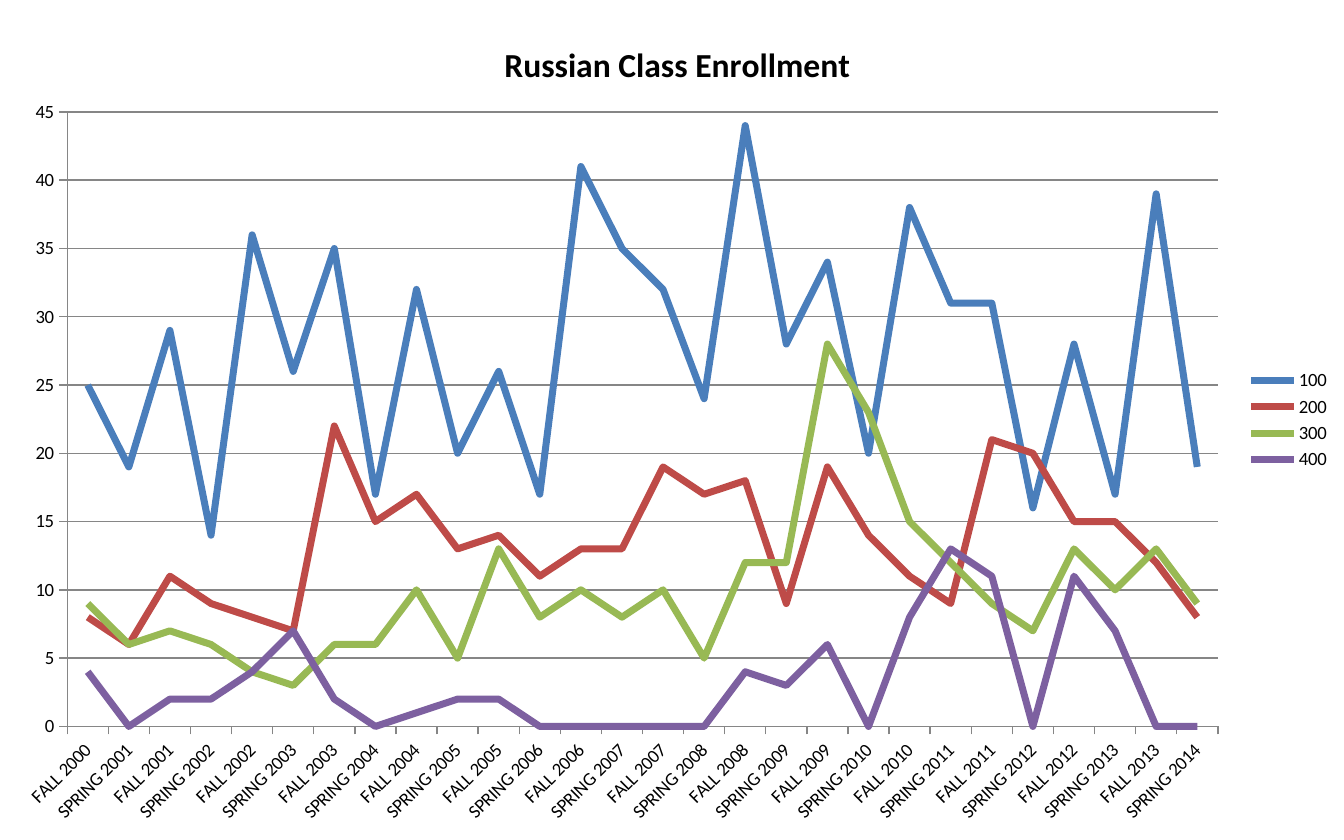
from dataclasses import dataclass

from pptx import Presentation
from pptx.chart.data import CategoryChartData
from pptx.dml.color import RGBColor
from pptx.enum.chart import XL_CHART_TYPE, XL_LEGEND_POSITION, XL_TICK_MARK
from pptx.oxml import parse_xml
from pptx.oxml.ns import nsdecls, qn
from pptx.util import Emu, Pt

SCALE = 9525  # EMU in one px
WIDE, HIGH = 960, 600
FONT = "Calibri"
COLORS = {
    "blue": "4A7EBB",
    "red": "BE4B48",
    "green": "98B954",
    "purple": "7D60A0",
    "grid": "868686",
    "text": "000000",
}


@dataclass
class Level:
    name: str
    color: str
    counts: list[int]


LEVELS = [
    Level("100", "blue", [25, 19, 29, 14, 36, 26, 35, 17, 32, 20, 26, 17, 41, 35,
                          32, 24, 44, 28, 34, 20, 38, 31, 31, 16, 28, 17, 39, 19]),
    Level("200", "red", [8, 6, 11, 9, 8, 7, 22, 15, 17, 13, 14, 11, 13, 13,
                         19, 17, 18, 9, 19, 14, 11, 9, 21, 20, 15, 15, 12, 8]),
    Level("300", "green", [9, 6, 7, 6, 4, 3, 6, 6, 10, 5, 13, 8, 10, 8,
                           10, 5, 12, 12, 28, 23, 15, 12, 9, 7, 13, 10, 13, 9]),
    Level("400", "purple", [4, 0, 2, 2, 4, 7, 2, 0, 1, 2, 2, 0, 0, 0,
                            0, 0, 4, 3, 6, 0, 8, 13, 11, 0, 11, 7, 0, 0]),
]
TERMS = [term for year in range(2000, 2014)
         for term in (f"FALL {year}", f"SPRING {year + 1}")]


def px(count: int) -> Emu:
    return Emu(count * SCALE)


def paint(line, color: str, width: float) -> None:
    line.color.rgb = RGBColor.from_string(COLORS[color])
    line.width = Pt(width)


def style(font, size: int, bold: bool = False) -> None:
    font.name = FONT
    font.size = Pt(size)
    font.bold = bold
    font.color.rgb = RGBColor.from_string(COLORS["text"])


def place(part, inner: bool = False, **sides: int) -> None:
    """Fix a chart part at x, y and, if given, w, h in px."""
    tags = '<c:layoutTarget val="inner"/>' if inner else ""
    tags += "".join(f'<c:{key}Mode val="edge"/>' for key in "xy")
    for key, side in sides.items():
        total = WIDE if key in "xw" else HIGH
        tags += f'<c:{key} val="{side / total:.4f}"/>'
    layout = parse_xml(f'<c:layout {nsdecls("c")}><c:manualLayout>{tags}'
                       '</c:manualLayout></c:layout>')
    old = part.find(qn("c:layout"))
    if old is None:
        part.insert(0, layout)
    else:
        part.replace(old, layout)


def add_title(chart, text: str) -> None:
    chart.has_title = True
    title = chart.chart_title
    title.text_frame.text = text
    style(title.text_frame.paragraphs[0].runs[0].font, 18, True)
    place(title._element, x=356, y=25)


def set_axes(chart) -> None:
    for axis in (chart.category_axis, chart.value_axis):
        axis.major_tick_mark = XL_TICK_MARK.OUTSIDE
        axis.minor_tick_mark = XL_TICK_MARK.NONE
        paint(axis.format.line, "grid", 0.75)
        style(axis.tick_labels.font, 10)
    # Slanted term names
    body = chart.category_axis._element.find(qn("c:txPr")).find(qn("a:bodyPr"))
    body.set("rot", "-2700000")
    # Scale and grid
    axis = chart.value_axis
    axis.minimum_scale, axis.maximum_scale, axis.major_unit = 0, 45, 5
    axis.has_major_gridlines = True
    paint(axis.major_gridlines.format.line, "grid", 0.75)


def add_graph(slide, levels: list[Level]) -> None:
    data = CategoryChartData()
    data.categories = TERMS
    for level in levels:
        data.add_series(level.name, level.counts)
    chart = slide.shapes.add_chart(XL_CHART_TYPE.LINE, 0, 0, px(WIDE), px(HIGH),
                                   data).chart
    style(chart.font, 10)
    add_title(chart, "Russian Class Enrollment")
    set_axes(chart)
    place(chart._chartSpace.chart.plotArea, True, x=48, y=80, w=822, h=439)

    # Lines
    plot = chart.plots[0]
    plot.vary_by_categories = False
    for series, level in zip(plot.series, levels):
        series.smooth = False
        paint(series.format.line, level.color, 3.75)

    # Legend
    chart.has_legend = True
    chart.legend.position = XL_LEGEND_POSITION.RIGHT
    chart.legend.include_in_layout = False
    style(chart.legend.font, 10)


def main() -> None:
    deck = Presentation()
    deck.slide_width, deck.slide_height = px(WIDE), px(HIGH)
    slide = deck.slides.add_slide(deck.slide_layouts[6])
    add_graph(slide, LEVELS)
    deck.save("out.pptx")


if __name__ == "__main__":
    main()
